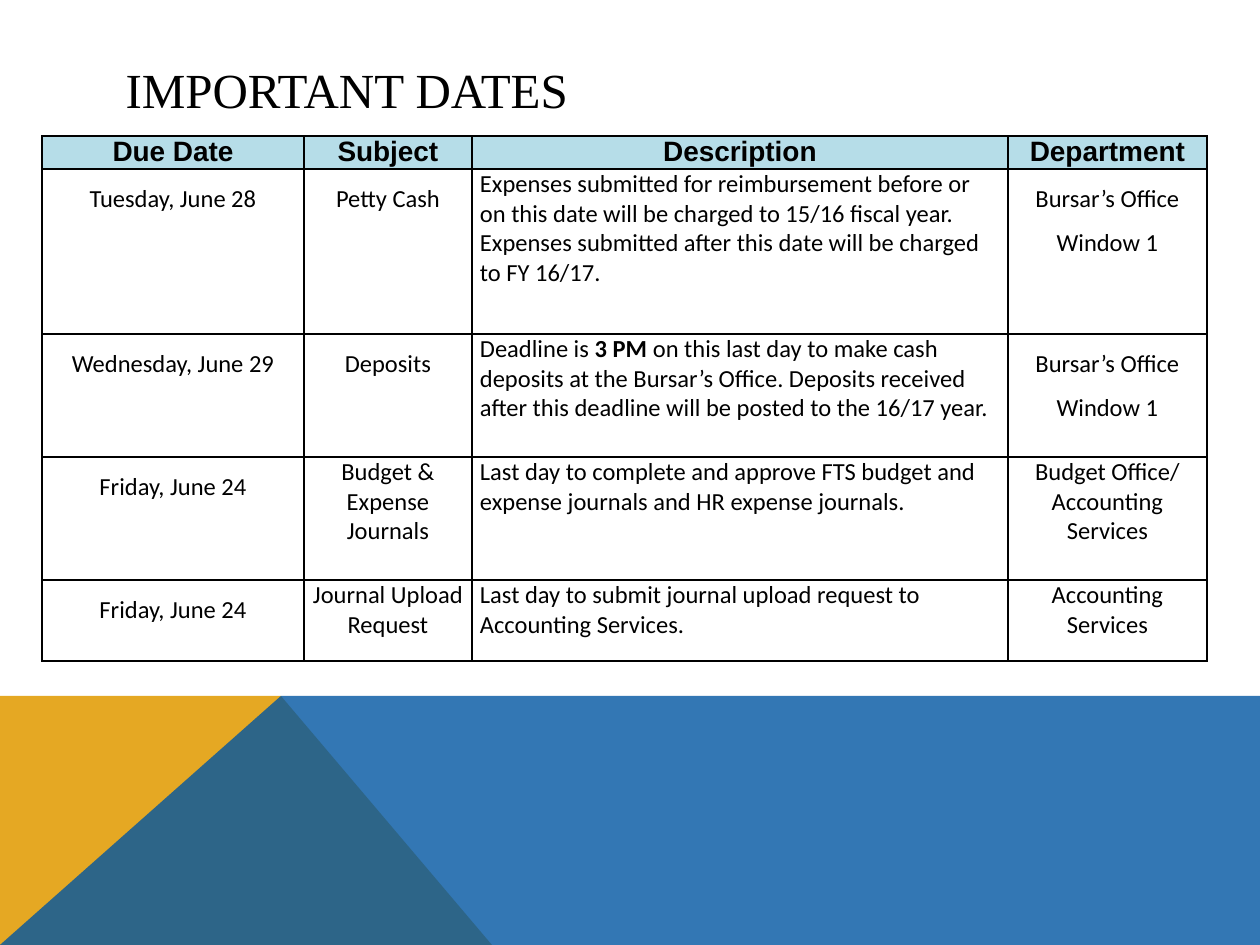
import pptx
import pptx.util
import pptx.dml.color
import pptx.enum.text
import pptx.oxml
import pptx.oxml.ns

# Content: a cell is a list of paragraphs, a paragraph a list of (text, bold)
TITLE = "IMPORTANT DATES"
HEADS = ["Due Date", "Subject", "Description", "Department"]
BURSAR = ["Bursar’s Office", "Window 1"]
ROWS = [
    ["Tuesday, June 28", "Petty Cash",
     [("Expenses submitted for reimbursement before or on this date will be "
       "charged to 15/16 fiscal year. Expenses submitted after this date will "
       "be charged to FY 16/17.", False)], BURSAR],
    ["Wednesday, June 29", "Deposits",
     [("Deadline is ", False), ("3 PM", True),
      (" on this last day to make cash deposits at the Bursar’s Office. Deposits "
       "received after this deadline will be posted to the 16/17 year.", False)],
     BURSAR],
    ["Friday, June 24", "Budget & Expense Journals",
     [("Last day to complete and approve FTS budget and expense journals and "
       "HR expense journals.", False)], "Budget Office/ Accounting Services"],
    ["Friday, June 24", "Journal Upload Request",
     [("Last day to submit journal upload request to Accounting Services.",
       False)], "Accounting Services"],
]
LOOSE = {(1, 0), (1, 1), (1, 3), (2, 0), (2, 1), (2, 3), (3, 0), (4, 0)}

# Layout in px
PX = 914400 / 126
WIDE, HIGH = 1260, 945
COLS = [262, 168, 536, 199]
TALL = [33, 165, 123, 123, 81]
LEFT, TOP = 42, 136
PEAK, EDGE = (281, 696), 696
BANDS = [
    ("gold", 100, [(0, HIGH), (0, EDGE), PEAK, (492, HIGH)]),
    ("blue", 80, [(0, HIGH), PEAK, (WIDE, EDGE), (WIDE, HIGH)]),
]
COLORS = {"gold": "E5A823", "blue": "0055A2", "head": "B6DDE8", "text": "000000"}
HEAD = {"name": "Arial", "size": pptx.util.Pt(16), "bold": True}
BODY = {"name": "Calibri", "size": pptx.util.Pt(14), "bold": False}
NAME = {"name": "Times New Roman", "size": pptx.util.Pt(28), "bold": False}
ALIGN = pptx.enum.text.PP_ALIGN
ANCHOR = pptx.enum.text.MSO_ANCHOR


def px(num):
    return pptx.util.Emu(round(num * PX))


def color(key):
    return pptx.dml.color.RGBColor.from_string(COLORS[key])


def style(item, form):
    for key, val in form.items():
        setattr(item, key, val)


def write(para, parts, form):
    for text, bold in parts:
        run = para.add_run()
        run.text = text
        style(run.font, form)
        run.font.bold = bold or form["bold"]
        run.font.color.rgb = color("text")


def border(cell):
    props = cell._tc.get_or_add_tcPr()
    for spot, side in enumerate(("lnL", "lnR", "lnT", "lnB")):
        props.insert(spot, pptx.oxml.parse_xml(
            f'<a:{side} {pptx.oxml.ns.nsdecls("a")} w="12700"><a:solidFill>'
            f'<a:srgbClr val="{COLORS["text"]}"/></a:solidFill></a:{side}>'))


def fill_cell(cell, item, row, col):
    style(cell, {"margin_left": px(8), "margin_right": px(8),
                 "margin_top": 0, "margin_bottom": 0,
                 "vertical_anchor": ANCHOR.TOP})
    if row == 0:
        cell.fill.solid()
        cell.fill.fore_color.rgb = color("head")
    else:
        cell.fill.background()
    border(cell)
    if isinstance(item, str):
        item = [item]
    paras = [item] if isinstance(item[0], tuple) else [[(t, False)] for t in item]
    for num, parts in enumerate(paras):
        frame = cell.text_frame
        para = frame.add_paragraph() if num else frame.paragraphs[0]
        left = row > 0 and col == 2
        para.alignment = ALIGN.LEFT if left else ALIGN.CENTER
        if (row, col) in LOOSE:
            para.line_spacing = 1.5
        write(para, parts, HEAD if row == 0 else BODY)


def main():
    deck = pptx.Presentation()
    deck.slide_width, deck.slide_height = px(WIDE), px(HIGH)
    slide = deck.slides.add_slide(deck.slide_layouts[5])

    # Bottom bands
    for key, alpha, points in BANDS:
        pen = slide.shapes.build_freeform(*points[0], scale=PX)
        pen.add_line_segments(points[1:], close=True)
        band = pen.convert_to_shape()
        band.shadow.inherit = False
        band.fill.solid()
        band.fill.fore_color.rgb = color(key)
        band.line.fill.background()
        if alpha < 100:
            tint = band.fill._xPr.find(".//" + pptx.oxml.ns.qn("a:srgbClr"))
            tint.append(pptx.oxml.parse_xml(
                f'<a:alpha {pptx.oxml.ns.nsdecls("a")} val="{alpha * 1000}"/>'))

    # Dates table
    grid = slide.shapes.add_table(len(TALL), len(COLS), px(LEFT), px(TOP),
                                  px(sum(COLS)), px(sum(TALL))).table
    style(grid, {"first_row": False, "horz_banding": False})
    for col, size in zip(grid.columns, COLS):
        col.width = px(size)
    for row, size in zip(grid.rows, TALL):
        row.height = px(size)
    for row, items in enumerate([HEADS] + ROWS):
        for col, item in enumerate(items):
            fill_cell(grid.cell(row, col), item, row, col)

    # Title
    title = slide.shapes.title
    style(title, {"left": px(113), "top": px(51),
                  "width": px(1036), "height": px(76)})
    title.text_frame.vertical_anchor = ANCHOR.MIDDLE
    para = title.text_frame.paragraphs[0]
    para.alignment = ALIGN.LEFT
    write(para, [(TITLE, False)], NAME)

    deck.save("out.pptx")


if __name__ == "__main__":
    main()
